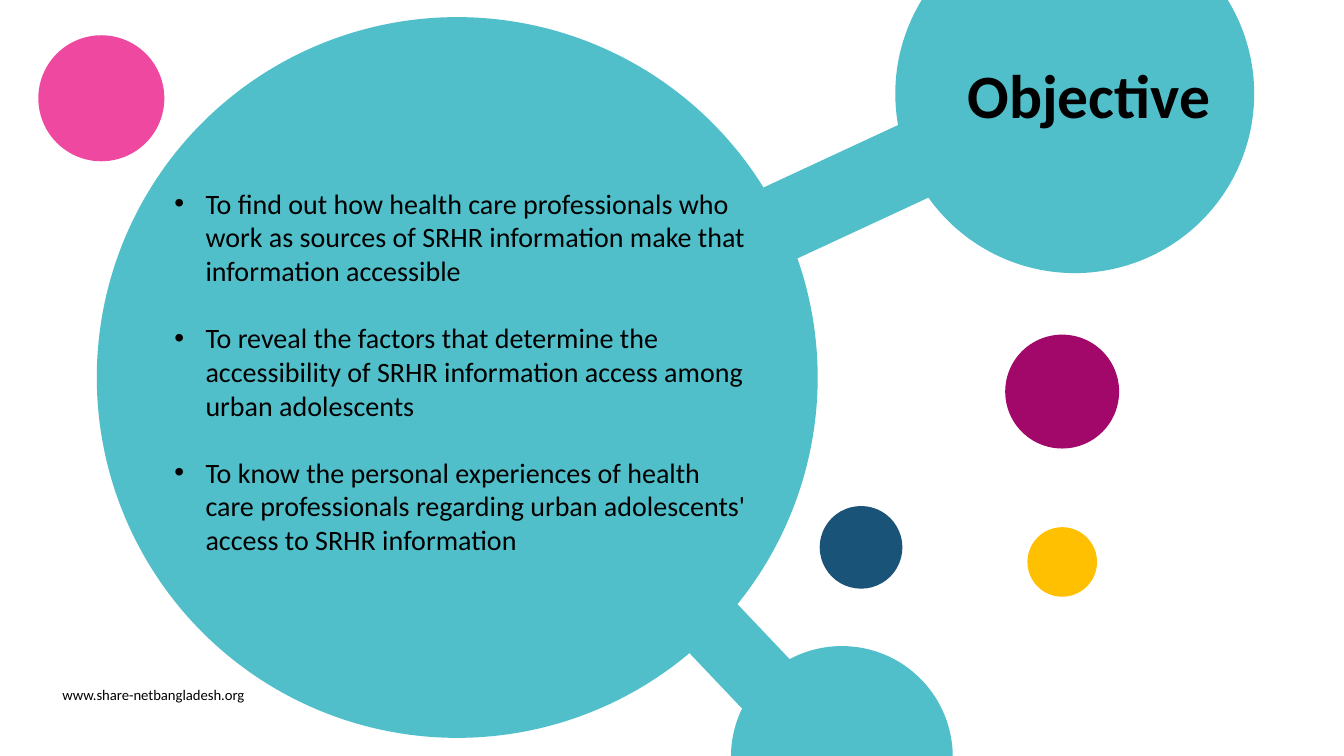
from lxml.etree import SubElement
from pptx import Presentation
from pptx.dml.color import RGBColor
from pptx.enum.shapes import MSO_SHAPE as Preset
from pptx.enum.text import MSO_ANCHOR as Anchor, PP_ALIGN as Align
from pptx.oxml.ns import qn
from pptx.util import Inches, Pt

COLORS = {"teal": "50BFCA", "yellow": "FFC001", "plum": "A10869",
          "pink": "EF48A1", "navy": "1A5378", "black": "000000"}
FONT = "Calibri"
OBJECTIVES = [
    "To find out how health care professionals who work as sources of SRHR "
    "information make that information accessible",
    "To reveal the factors that determine the accessibility of SRHR "
    "information access among urban adolescents",
    "To know the personal experiences of health care professionals regarding "
    "urban adolescents' access to SRHR information",
]
NETWORK_CIRCLES = [(0.96, 0.17, 7.15), (7.25, 6.41, 2.2), (8.88, -0.85, 3.56)]
NETWORK_LINKS = [(6.93, 6.18, 0.83, 0.68, 46.5), (7.46, 1.44, 2.21, 0.78, 335.1)]
DOTS = [(10.19, 5.23, 0.69, "yellow"), (9.97, 3.32, 1.13, "plum"),
        (0.38, 0.35, 1.25, "pink"), (8.13, 5.02, 0.82, "navy")]


def add_filled(slide, preset, left, top, width, height, color, rotation=0):
    """Add a borderless filled shape."""
    shape = slide.shapes.add_shape(
        preset, Inches(left), Inches(top), Inches(width), Inches(height))
    shape.shadow.inherit = False
    shape.fill.solid()
    shape.fill.fore_color.rgb = RGBColor.from_string(COLORS[color])
    shape.line.fill.background()
    shape.rotation = rotation


def add_circle(slide, left, top, diameter, color):
    """Add a filled circle."""
    add_filled(slide, Preset.OVAL, left, top, diameter, diameter, color)


def add_frame(slide, left, top, width, height):
    """Add a wrapping text box and return its text frame."""
    box = slide.shapes.add_textbox(
        Inches(left), Inches(top), Inches(width), Inches(height))
    box.text_frame.word_wrap = True
    return box.text_frame


def add_run(paragraph, text, size, bold=False):
    """Add a black run to a paragraph."""
    run = paragraph.add_run()
    run.text = text
    run.font.name = FONT
    run.font.size = Pt(size)
    run.font.bold = bold
    run.font.color.rgb = RGBColor.from_string(COLORS["black"])


def set_bullet(paragraph):
    """Give a paragraph a black bullet with a hanging indent."""
    properties = paragraph._p.get_or_add_pPr()
    properties.set("marL", str(Inches(0.31)))
    properties.set("indent", str(-Inches(0.31)))
    color = SubElement(properties, qn("a:buClr"))
    SubElement(color, qn("a:srgbClr"), val=COLORS["black"])
    SubElement(properties, qn("a:buFont"), typeface="Arial")
    SubElement(properties, qn("a:buChar"), char="•")


def add_title(slide, text):
    """Add the centred slide title."""
    frame = add_frame(slide, 9.22, 0.17, 3.26, 1.62)
    frame.margin_left = 0
    frame.vertical_anchor = Anchor.MIDDLE
    paragraph = frame.paragraphs[0]
    paragraph.alignment = Align.CENTER
    paragraph.line_spacing = 0.9
    add_run(paragraph, text, 44, bold=True)


def add_objectives(slide, objectives):
    """Add the bulleted objectives, one line apart."""
    frame = add_frame(slide, 1.63, 1.8, 5.89, 3.8)
    for index, objective in enumerate(objectives):
        paragraph = frame.add_paragraph() if index else frame.paragraphs[0]
        set_bullet(paragraph)
        if index:
            paragraph.space_before = Pt(24)
        add_run(paragraph, objective, 20)


def main():
    """Build and save the objective slide."""
    presentation = Presentation()
    presentation.slide_width = Inches(13.33)
    presentation.slide_height = Inches(7.5)
    slide = presentation.slides.add_slide(presentation.slide_layouts[6])
    for circle in NETWORK_CIRCLES:
        add_circle(slide, *circle, "teal")
    for *bounds, rotation in NETWORK_LINKS:
        add_filled(slide, Preset.RECTANGLE, *bounds, "teal", rotation)
    footer = add_frame(slide, 0.52, 6.75, 2.05, 0.28)
    add_run(footer.paragraphs[0], "www.share-netbangladesh.org", 10.5)
    add_title(slide, "Objective")
    for dot in DOTS:
        add_circle(slide, *dot)
    add_objectives(slide, OBJECTIVES)
    presentation.save("out.pptx")


if __name__ == "__main__":
    main()
